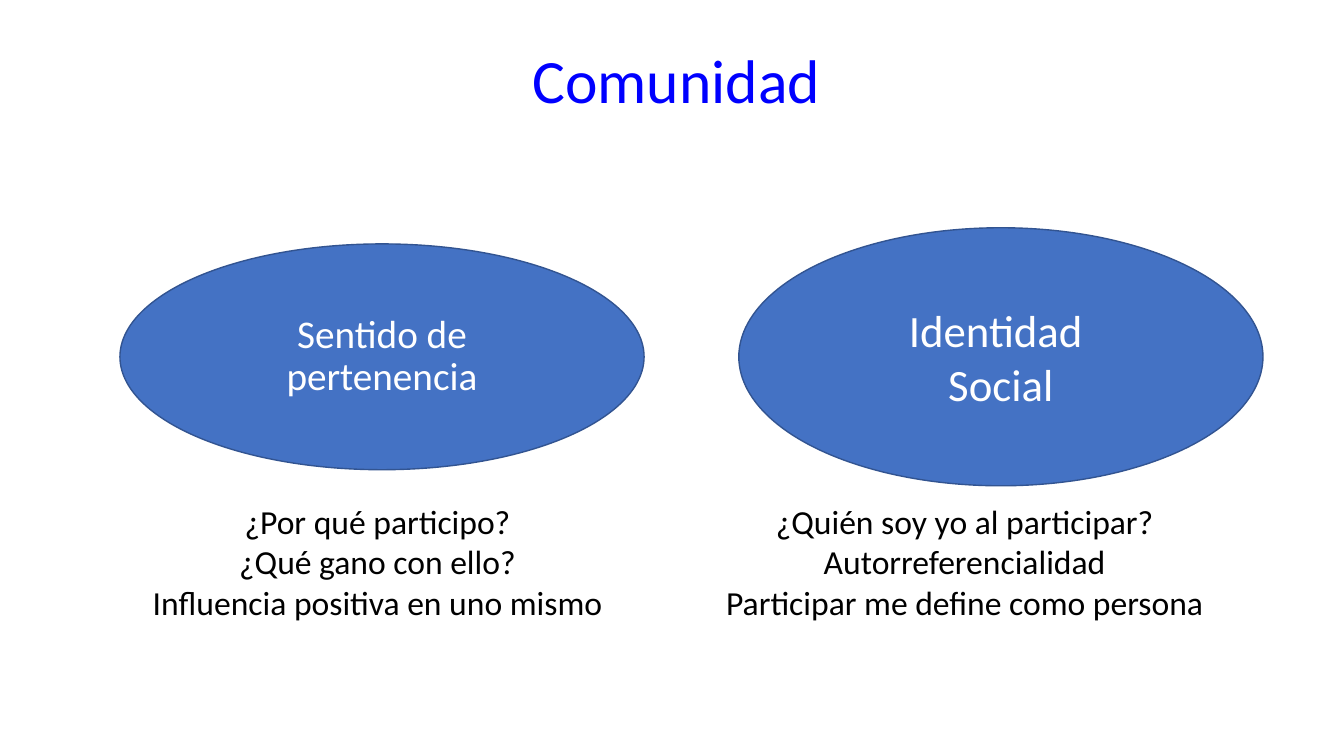
from dataclasses import dataclass

from pptx import Presentation
from pptx.dml.color import RGBColor
from pptx.enum.shapes import MSO_SHAPE
from pptx.enum.text import MSO_ANCHOR, PP_ALIGN
from pptx.slide import Slide
from pptx.text.text import TextFrame
from pptx.util import Pt


@dataclass(frozen=True)
class Theme:
    font: str = "Calibri"
    title_color: RGBColor = RGBColor(0x00, 0x00, 0xFF)
    text_color: RGBColor = RGBColor(0x00, 0x00, 0x00)
    ellipse_text: RGBColor = RGBColor(0xFF, 0xFF, 0xFF)
    ellipse_fill: RGBColor = RGBColor(0x44, 0x72, 0xC4)
    ellipse_line: RGBColor = RGBColor(0x32, 0x54, 0x91)
    title_size: float = 44
    question_size: float = 24


@dataclass(frozen=True)
class Box:
    left: float
    top: float
    width: float
    height: float

    def lengths(self) -> tuple[Pt, Pt, Pt, Pt]:
        return Pt(self.left), Pt(self.top), Pt(self.width), Pt(self.height)


@dataclass(frozen=True)
class Concept:
    box: Box
    lines: tuple[str, ...]
    size: float
    line_spacing: float


@dataclass(frozen=True)
class Questions:
    box: Box
    lines: tuple[str, ...]


THEME = Theme()
TITLE_BOX = Box(74.16, 7.2, 828, 104.4)
CONCEPTS = (
    Concept(Box(85.68, 174.24, 374.4, 161.28), ("Sentido de pertenencia",), 28, 0.9),
    Concept(Box(527.76, 162.72, 374.4, 184.32), ("Identidad ", "Social"), 32, 1.0),
)
QUESTIONS = (
    Questions(
        Box(85.68, 354.24, 367.92, 94.32),
        ("¿Por qué participo?", "¿Qué gano con ello?", "Influencia positiva en uno mismo"),
    ),
    Questions(
        Box(501.84, 354.24, 374.4, 116.64),
        ("¿Quién soy yo al participar?", "Autorreferencialidad", "Participar me define como persona"),
    ),
)


def write_lines(
    frame: TextFrame,
    lines: tuple[str, ...],
    size: float,
    color: RGBColor,
    anchor: MSO_ANCHOR,
    line_spacing: float = 1.0,
) -> None:
    frame.word_wrap = True
    frame.vertical_anchor = anchor
    for index, line in enumerate(lines):
        paragraph = frame.add_paragraph() if index else frame.paragraphs[0]
        paragraph.text = line
        paragraph.alignment = PP_ALIGN.CENTER
        paragraph.line_spacing = line_spacing
        paragraph.font.name = THEME.font
        paragraph.font.size = Pt(size)
        paragraph.font.color.rgb = color


def draw_title(slide: Slide, text: str) -> None:
    title = slide.shapes.title
    title.left, title.top, title.width, title.height = TITLE_BOX.lengths()
    write_lines(title.text_frame, (text,), THEME.title_size, THEME.title_color, MSO_ANCHOR.MIDDLE, 0.9)


def draw_concept(slide: Slide, concept: Concept) -> None:
    ellipse = slide.shapes.add_shape(MSO_SHAPE.OVAL, *concept.box.lengths())
    ellipse.shadow.inherit = False
    ellipse.fill.solid()
    ellipse.fill.fore_color.rgb = THEME.ellipse_fill
    ellipse.line.color.rgb = THEME.ellipse_line
    ellipse.line.width = Pt(1)
    write_lines(
        ellipse.text_frame, concept.lines, concept.size,
        THEME.ellipse_text, MSO_ANCHOR.MIDDLE, concept.line_spacing,
    )


def draw_questions(slide: Slide, questions: Questions) -> None:
    text_box = slide.shapes.add_textbox(*questions.box.lengths())
    write_lines(
        text_box.text_frame, questions.lines, THEME.question_size,
        THEME.text_color, MSO_ANCHOR.TOP,
    )


def main() -> None:
    presentation = Presentation()
    presentation.slide_width = Pt(960)
    presentation.slide_height = Pt(540)
    slide = presentation.slides.add_slide(presentation.slide_layouts[5])
    draw_title(slide, "Comunidad ")
    for concept in CONCEPTS:
        draw_concept(slide, concept)
    for questions in QUESTIONS:
        draw_questions(slide, questions)
    presentation.save("out.pptx")


if __name__ == "__main__":
    main()
